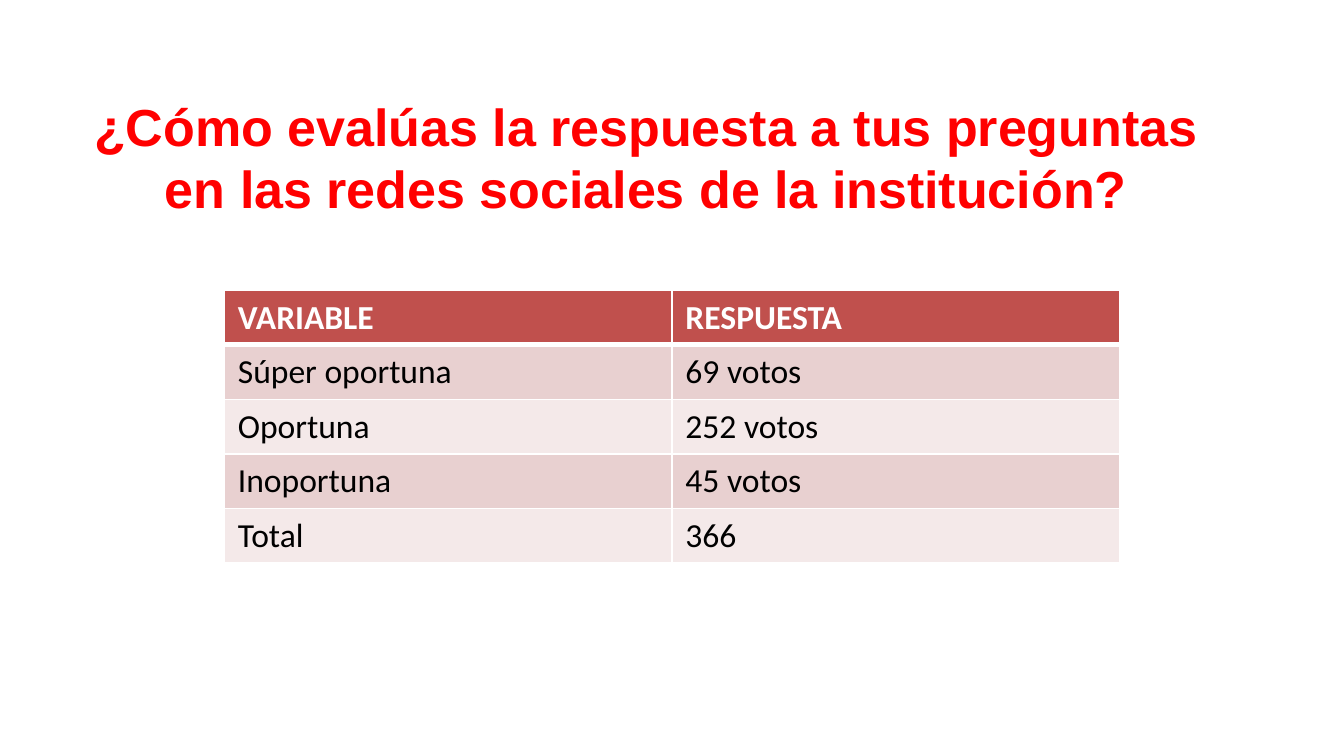
from lxml import etree
from pptx import Presentation
from pptx.dml.color import RGBColor
from pptx.enum import text
from pptx.oxml import ns
from pptx.util import Inches, Pt

RED = RGBColor(0xFF, 0x00, 0x00)
WHITE = RGBColor(0xFF, 0xFF, 0xFF)
BLACK = RGBColor(0x00, 0x00, 0x00)
HEADER_FILL = RGBColor(0xC0, 0x50, 0x4D)
BAND_FILLS = (RGBColor(0xE8, 0xD0, 0xD0), RGBColor(0xF4, 0xE9, 0xE9))

QUESTION = (
    "¿Cómo evalúas la respuesta a tus preguntas\v"
    "en las redes sociales de la institución?"
)
VOTES = (
    ("VARIABLE", "RESPUESTA"),
    ("Súper oportuna", "69 votos"),
    ("Oportuna", "252 votos"),
    ("Inoportuna", "45 votos"),
    ("Total", "366"),
)


def write_text(frame, content, *, font, size, color, bold=False,
               align=text.PP_ALIGN.LEFT, line_spacing=None):
    frame.word_wrap = True
    paragraph = frame.paragraphs[0]
    paragraph.text = content
    paragraph.alignment = align
    paragraph.line_spacing = line_spacing
    for run in paragraph.runs:
        run.font.name = font
        run.font.size = Pt(size)
        run.font.bold = bold
        run.font.color.rgb = color


def set_borders(cell, color, **widths):
    properties = cell._tc.get_or_add_tcPr()
    for index, (side, width) in enumerate(widths.items()):
        line = etree.Element(ns.qn(f"a:ln{side}"), w=str(Pt(width)))
        fill = etree.SubElement(line, ns.qn("a:solidFill"))
        etree.SubElement(fill, ns.qn("a:srgbClr"), val=str(color))
        properties.insert(index, line)


def add_title(slide, left, top, width, height):
    title = slide.shapes.add_textbox(left, top, width, height)
    frame = title.text_frame
    frame.vertical_anchor = text.MSO_ANCHOR.BOTTOM
    frame.margin_top = 0
    frame.margin_bottom = Inches(0.11)
    write_text(frame, QUESTION, font="Arial", size=27.9, color=RED, bold=True,
               align=text.PP_ALIGN.CENTER, line_spacing=Pt(33.5))


def add_votes_table(slide, left, top, width, height):
    table = slide.shapes.add_table(
        len(VOTES), len(VOTES[0]), left, top, width, height).table
    for row, values in enumerate(VOTES):
        header = row == 0
        for column, value in enumerate(values):
            cell = table.cell(row, column)
            cell.fill.solid()
            cell.fill.fore_color.rgb = (
                HEADER_FILL if header else BAND_FILLS[(row - 1) % 2])
            set_borders(cell, WHITE, L=1, R=1,
                        T=3 if row == 1 else 1, B=3 if header else 1)
            write_text(cell.text_frame, value, font="Calibri", size=18,
                       color=WHITE if header else BLACK, bold=header)


def main():
    presentation = Presentation()
    presentation.slide_width = Inches(10)
    presentation.slide_height = presentation.slide_width * 9 // 16
    slide = presentation.slides.add_slide(presentation.slide_layouts[6])
    add_title(slide, Inches(0.55), Inches(1.24), Inches(8.51), Inches(0.5))
    add_votes_table(slide, Inches(1.67), Inches(2.16), Inches(6.66), Inches(2.03))
    presentation.save("out.pptx")


if __name__ == "__main__":
    main()
